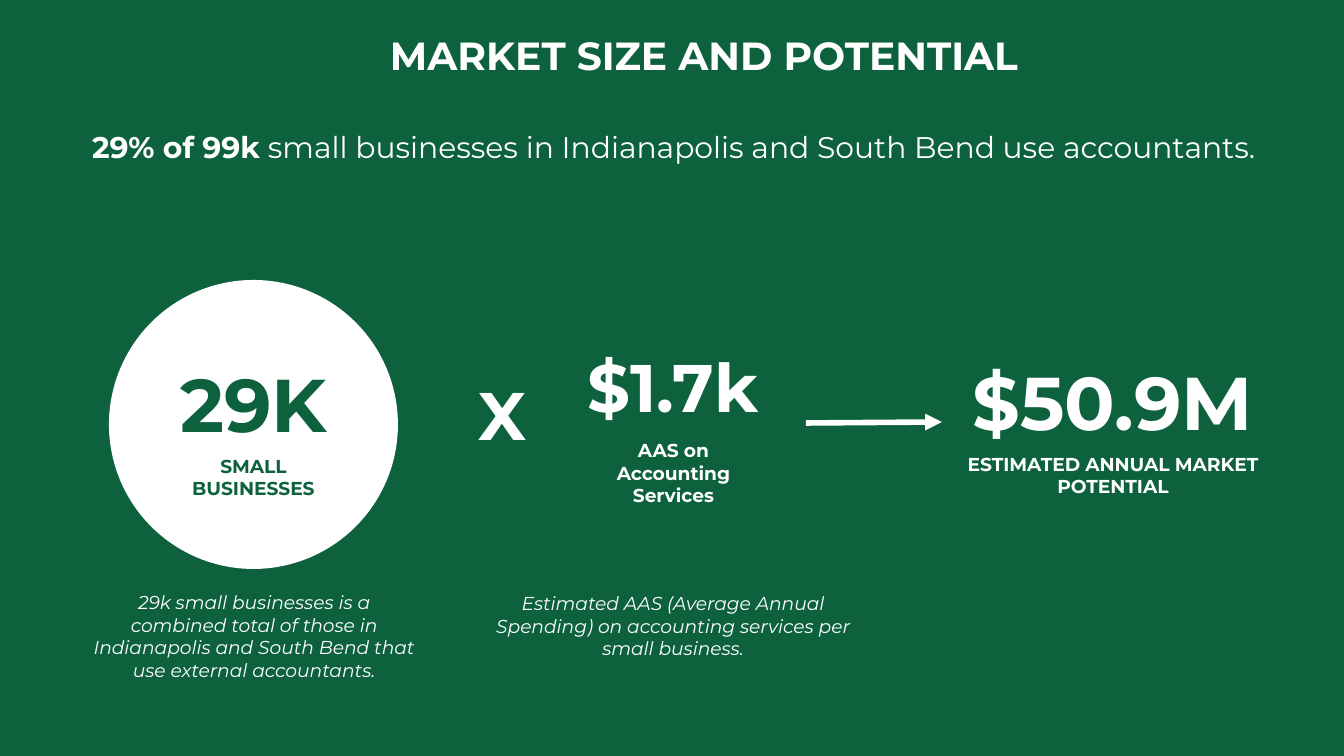
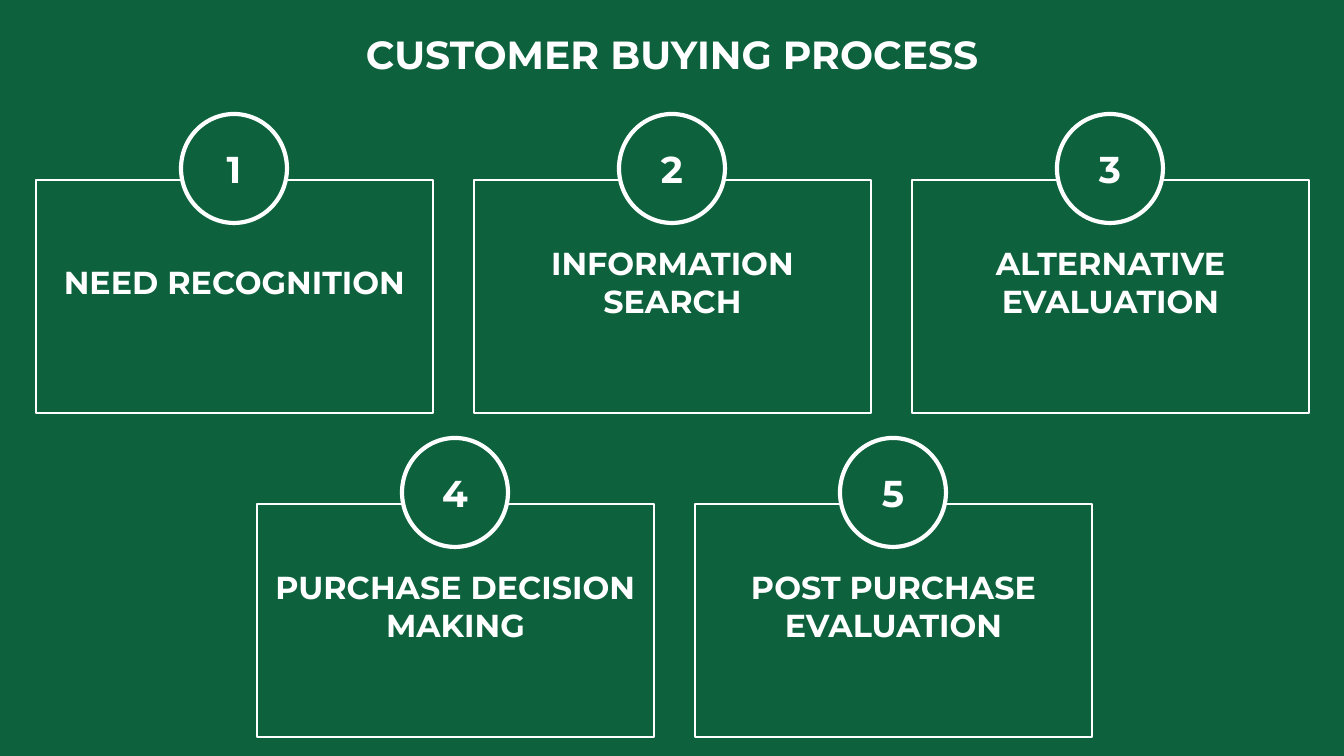
from pptx import Presentation
from pptx.dml.color import RGBColor
from pptx.enum.shapes import MSO_CONNECTOR, MSO_SHAPE as Shape
from pptx.enum.text import MSO_ANCHOR as Anchor, PP_ALIGN as Align
from pptx.oxml.ns import qn
from pptx.util import Pt
from lxml.etree import SubElement

PX = 6804
GREEN = "0D623D"
WHITE = "FFFFFF"
FONT = "Montserrat"
INSET = 13
color = RGBColor.from_string


def add_box(slide, x, y, w, h, kind=None, fill=None, outline=None):
    place = [v * PX for v in (x, y, w, h)]
    if kind is None:
        return slide.shapes.add_textbox(*place)
    box = slide.shapes.add_shape(kind, *place)
    box.shadow.inherit = False
    if fill:
        box.fill.solid()
        box.fill.fore_color.rgb = color(fill)
    else:
        box.fill.background()
    if outline:
        box.line.color.rgb = color(WHITE)
        box.line.width = Pt(outline)
    else:
        box.line.fill.background()
    return box


def write(box, text, size=10, bold=True, italic=False, ink=WHITE, align=Align.CENTER,
          anchor=Anchor.MIDDLE, spacing=None, before=0, lower=0, same_line=False):
    frame = box.text_frame
    if not frame.text:
        frame.word_wrap = True
        frame.vertical_anchor = anchor
        frame.margin_left = frame.margin_right = INSET * PX
        frame.margin_top = (INSET + max(lower, 0)) * PX
        frame.margin_bottom = (INSET + max(-lower, 0)) * PX
        paragraph = frame.paragraphs[0]
    elif same_line:
        paragraph = frame.paragraphs[-1]
    else:
        paragraph = frame.add_paragraph()
    paragraph.alignment = align
    if spacing:
        paragraph.line_spacing = spacing
    if before:
        paragraph.space_before = Pt(before)
    run = paragraph.add_run()
    run.text = text
    run.font.name = FONT
    run.font.size = Pt(size)
    run.font.bold = bold
    run.font.italic = italic
    run.font.color.rgb = color(ink)


deck = Presentation()
deck.slide_width = 1344 * PX
deck.slide_height = 756 * PX

slides = []
for title, x, y, w in [
    ("MARKET SIZE AND POTENTIAL", 301, 27, 806),
    ("CUSTOMER BUYING PROCESS", 189, 26, 966),
]:
    slide = deck.slides.add_slide(deck.slide_layouts[6])
    slide.background.fill.solid()
    slide.background.fill.fore_color.rgb = color(GREEN)
    write(add_box(slide, x, y, w, 59), title, size=21, anchor=Anchor.TOP, spacing=0.8)
    slides.append(slide)
market, process = slides

summary = add_box(market, 79, 116, 1250, 63)
write(summary, "29% of 99k", size=16, align=Align.LEFT, anchor=Anchor.TOP)
write(summary, " small businesses in Indianapolis and South Bend use accountants.",
      size=16, bold=False, align=Align.LEFT, same_line=True)

for x, y, w, h, fill, ink, figure, size, caption, gap, lower in [
    (109, 280, 289, 289, WHITE, GREEN, "29K", 40, "SMALL BUSINESSES", 4, 8),
    (529, 280, 289, 289, None, WHITE, "$1.7k", 36, "AAS on Accounting Services", 7, 3),
    (884, 253, 458, 341, None, WHITE, "$50.9M", 40, "ESTIMATED ANNUAL MARKET POTENTIAL", 4, 6),
]:
    factor = add_box(market, x, y, w, h, Shape.OVAL, fill)
    write(factor, figure, size=size, ink=ink, lower=lower)
    write(factor, caption, ink=ink, before=gap)

for x, y, w, note in [
    (79, 568, 350, "29k small businesses is a combined total of those in Indianapolis "
                   "and South Bend that use external accountants."),
    (480, 558, 386, "Estimated AAS (Average Annual Spending) on accounting services "
                    "per small business."),
]:
    write(add_box(market, x, y, w, 136), note, bold=False, italic=True)

write(add_box(market, 465, 392, 75, 59), "X", size=36, spacing=0.8)

arrow = market.shapes.add_connector(
    MSO_CONNECTOR.STRAIGHT, 806 * PX, 423 * PX, 942 * PX, 422 * PX)
arrow.line.color.rgb = color(WHITE)
arrow.line.width = Pt(3)
SubElement(arrow.line._get_or_add_ln(), qn("a:tailEnd"), type="triangle")
SubElement(arrow._element.spPr, qn("a:effectLst"))

CARD_W, CARD_H, CARD_PITCH = 397, 233, 438
BADGE_W, BADGE_H, BADGE_RISE = 106, 109, 66
number = 0
for left, top, steps in [
    (36, 180, ["NEED RECOGNITION", "INFORMATION SEARCH", "ALTERNATIVE\nEVALUATION"]),
    (257, 504, ["PURCHASE DECISION MAKING", "POST PURCHASE EVALUATION"]),
]:
    for column, step in enumerate(steps):
        number += 1
        x = left + column * CARD_PITCH
        card = add_box(process, x, top, CARD_W, CARD_H, Shape.RECTANGLE, outline=1.5)
        for line in step.split("\n"):
            write(card, line, size=17, lower=-30)
        badge = add_box(process, x + (CARD_W - BADGE_W) // 2, top - BADGE_RISE,
                        BADGE_W, BADGE_H, Shape.OVAL, GREEN, 2.25)
        write(badge, str(number), size=20)

deck.save("out.pptx")
